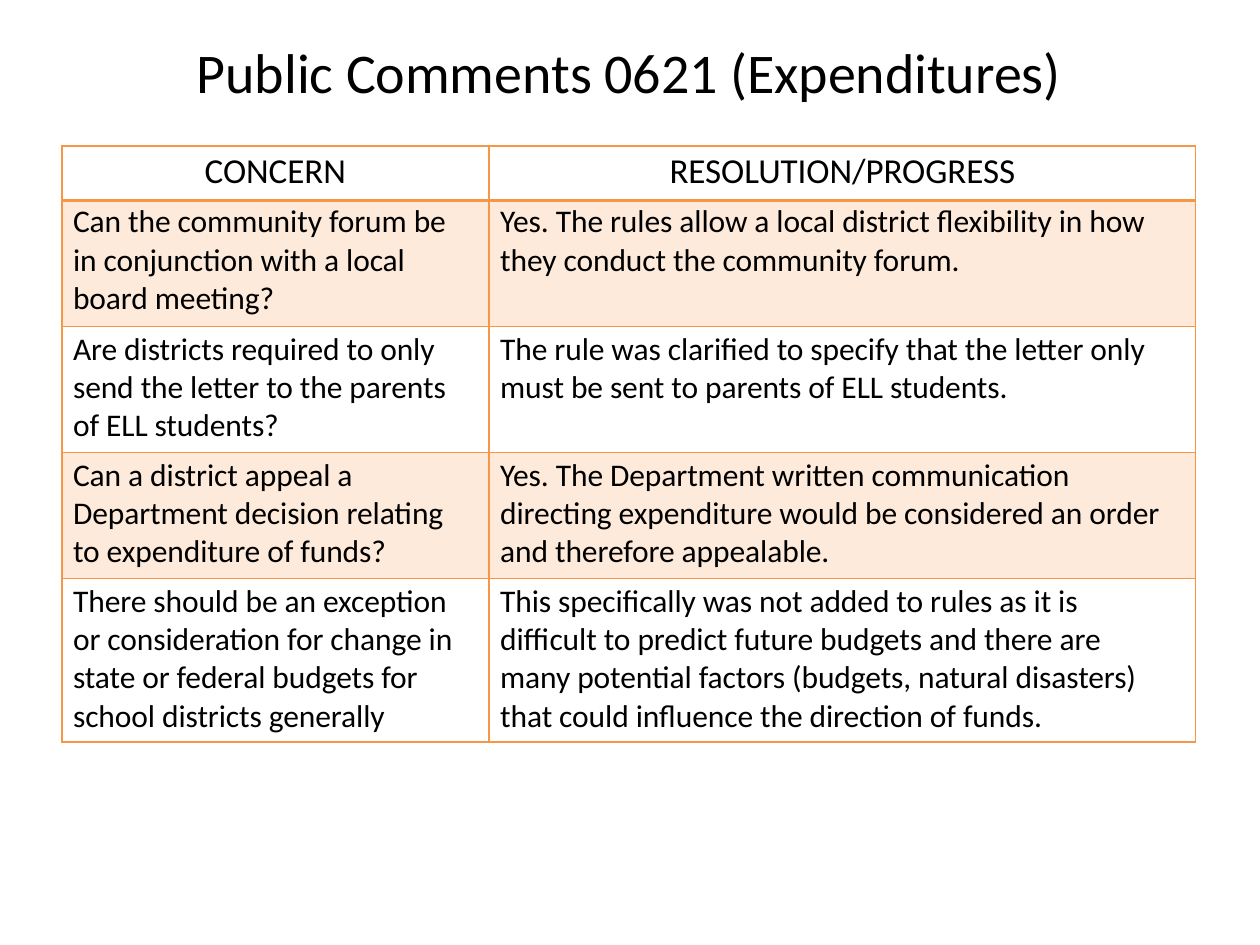
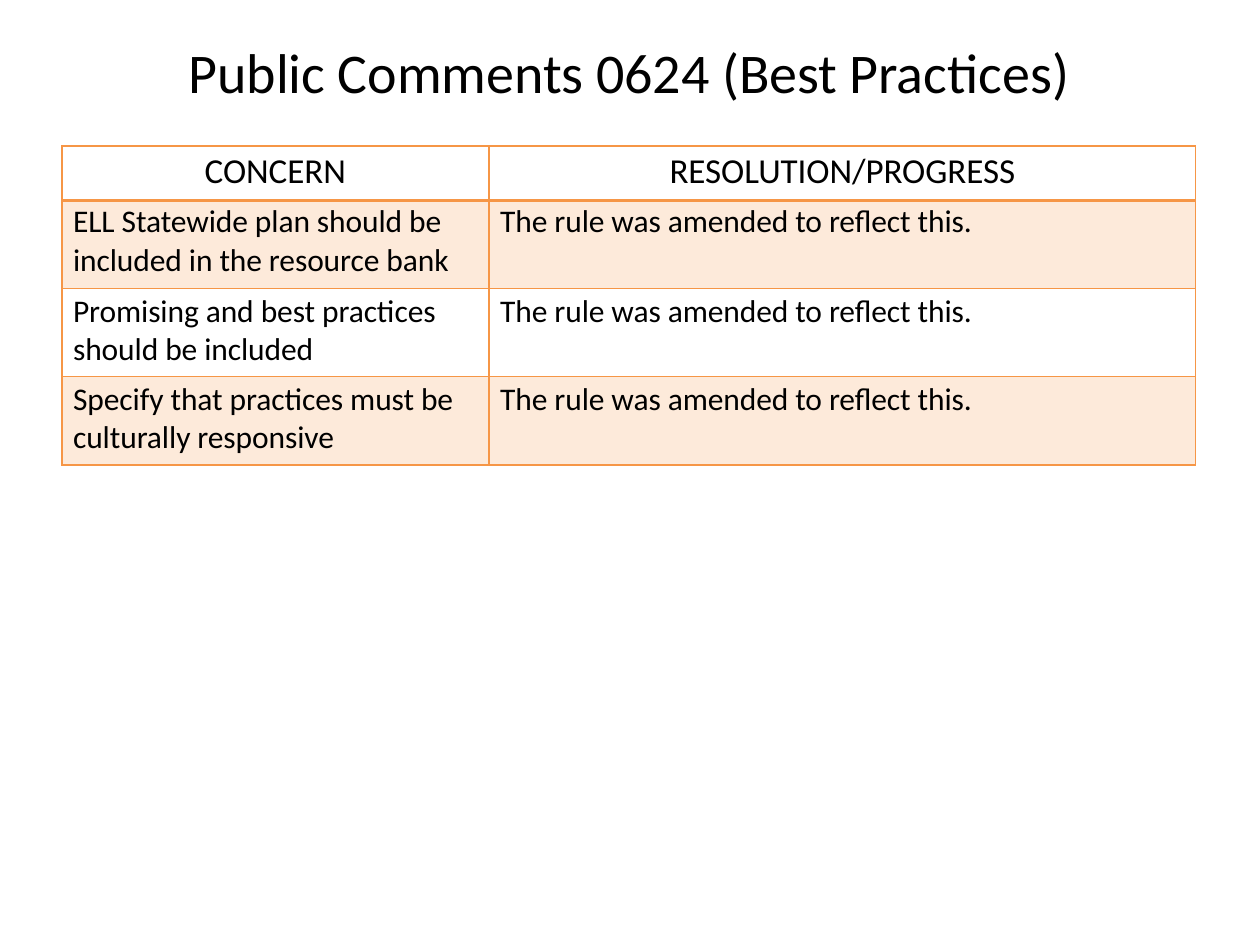
"""Build two slides of public comments, each a title above a concern and resolution table."""
from lxml import etree
from pptx import Presentation
from pptx import util as u
from pptx.dml.color import RGBColor
from pptx.enum import text
from pptx.oxml.ns import qn

FONT, INK, ORANGE = "Calibri", "000000", "F69646"
MIDDLE, TITLE_TOP, TITLE_HEIGHT = 4.99, 0.3, 0.55
TABLE_LEFT, TABLE_TOP = 0.49, 1.16
COLUMNS = [3.39, 5.61]
RIGHT_MARGINS = [0.2, 0.25]
HEADINGS = ("CONCERN", "RESOLUTION/PROGRESS")
AMENDED = "The rule was amended to reflect this."

PAGES = [
    ("Public Comments 0621 (Expenditures)", 6.91, [0.43, 1, 1, 1, 1.3], [
        ("Can the community forum be in conjunction with a local board meeting?",
         "Yes. The rules allow a local district flexibility in how they conduct "
         "the community forum."),
        ("Are districts required to only send the letter to the parents of ELL students?",
         "The rule was clarified to specify that the letter only must be sent to "
         "parents of ELL students."),
        ("Can a district appeal a Department decision relating to expenditure of funds?",
         "Yes. The Department written communication directing expenditure would be "
         "considered an order and therefore appealable."),
        ("There should be an exception or consideration for change in state or "
         "federal budgets for school districts generally",
         "This specifically was not added to rules as it is difficult to predict "
         "future budgets and there are many potential factors (budgets, natural "
         "disasters) that could influence the direction of funds."),
    ]),
    ("Public Comments 0624 (Best Practices)", 7.04, [0.43, 0.7, 0.7, 0.7], [
        ("ELL Statewide plan should be included in the resource bank", AMENDED),
        ("Promising and best practices should be included", AMENDED),
        ("Specify that practices must be culturally responsive", AMENDED),
    ]),
]


def write(frame, wording, size, align):
    """Put one paragraph of slightly tightened text into a frame."""
    frame.text = wording
    para = frame.paragraphs[0]
    para.alignment = align
    para.font.name, para.font.size, para.font.bold = FONT, u.Pt(size), False
    para.font.color.rgb = RGBColor.from_string(INK)
    para.runs[0]._r.get_or_add_rPr().set("spc", "-5")


def add_border(cell, side, points):
    """Draw one orange edge of a cell."""
    edge = etree.SubElement(cell._tc.get_or_add_tcPr(), qn(f"a:ln{side}"), w=str(u.Pt(points)))
    paint = etree.SubElement(edge, qn("a:solidFill"))
    etree.SubElement(paint, qn("a:srgbClr"), val=ORANGE)


deck = Presentation()
deck.slide_width, deck.slide_height = u.Inches(10), u.Inches(7.5)

for heading, title_width, heights, comments in PAGES:
    page = deck.slides.add_slide(deck.slide_layouts[5])
    title = page.shapes.title
    title.left, title.top = u.Inches(MIDDLE - title_width / 2), u.Inches(TITLE_TOP)
    title.width, title.height = u.Inches(title_width), u.Inches(TITLE_HEIGHT)
    frame = title.text_frame
    frame.margin_left = frame.margin_right = frame.margin_top = frame.margin_bottom = 0
    frame.vertical_anchor = text.MSO_ANCHOR.TOP
    frame.auto_size = text.MSO_AUTO_SIZE.SHAPE_TO_FIT_TEXT
    write(frame, heading, 32, text.PP_ALIGN.CENTER)

    table = page.shapes.add_table(
        len(heights), len(COLUMNS), u.Inches(TABLE_LEFT), u.Inches(TABLE_TOP),
        u.Inches(sum(COLUMNS)), u.Inches(sum(heights))).table
    table.first_row = table.horz_banding = False
    for column, width in zip(table.columns, COLUMNS):
        column.width = u.Inches(width)

    for row, (height, wordings) in enumerate(zip(heights, [HEADINGS] + comments)):
        table.rows[row].height = u.Inches(height)
        for column, wording in enumerate(wordings):
            cell = table.cell(row, column)
            cell.margin_top, cell.margin_bottom = u.Inches(0.02 if row == 1 else 0.03), 0
            if row == 0:
                cell.margin_left = cell.margin_right = 0
                write(cell.text_frame, wording, 20, text.PP_ALIGN.CENTER)
            else:
                cell.margin_left = u.Inches(0.09)
                cell.margin_right = u.Inches(RIGHT_MARGINS[column])
                write(cell.text_frame, wording, 18, text.PP_ALIGN.LEFT)
            for side in "LRTB":
                under_headings = (row, side) in ((0, "B"), (1, "T"))
                add_border(cell, side, 2 if under_headings else 1)
            if row % 2:
                cell.fill.solid()
                cell.fill.fore_color.rgb = RGBColor.from_string(ORANGE)
                tint = cell._tc.tcPr.find(qn("a:solidFill")).find(qn("a:srgbClr"))
                etree.SubElement(tint, qn("a:alpha"), val="20000")
            else:
                cell.fill.background()

deck.save("out.pptx")
